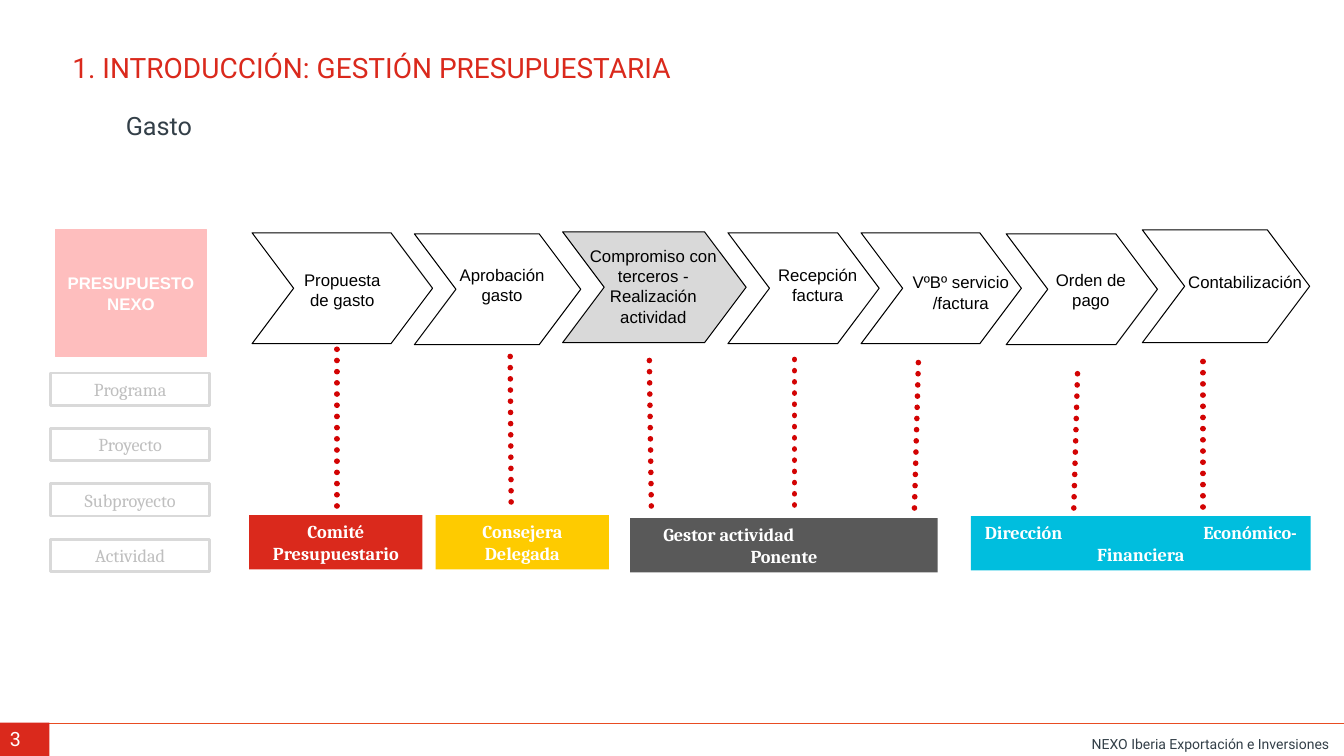
"""Build the slide on the spending workflow of the budget."""
from dataclasses import dataclass

from lxml.etree import SubElement
from pptx import Presentation
from pptx.dml.color import RGBColor
from pptx.enum.dml import MSO_LINE
from pptx.enum.shapes import MSO_CONNECTOR, MSO_SHAPE
from pptx.enum.text import MSO_ANCHOR, PP_ALIGN
from pptx.oxml.ns import qn
from pptx.util import Inches, Pt


@dataclass(frozen=True)
class Theme:
    """Colours, fonts and type sizes of the slide."""
    red: str = "DA291C"
    dots: str = "D30303"
    rule: str = "E84C22"
    pink: str = "FEBEBE"
    yellow: str = "FECB00"
    cyan: str = "00BEDE"
    charcoal: str = "595959"
    silver: str = "D9D9D9"
    faded: str = "BFBFBF"
    slate: str = "333F48"
    black: str = "000000"
    white: str = "FFFFFF"
    brand: str = "Roboto"
    plain: str = "Arial"
    serif: str = "Cambria"
    title: int = 20
    subtitle: int = 18
    number: int = 14
    owner: int = 13
    step: int = 12
    footer: int = 10


THEME = Theme()
WIDTH, HEIGHT = 13.33, 7.5
FOOTER_TOP = 7.17

TITLE = "1. INTRODUCCIÓN: GESTIÓN PRESUPUESTARIA"
SUBTITLE = "Gasto"
FOOTER = "NEXO Iberia Exportación e Inversiones"
PAGE_NUMBER = "3"
BUDGET = "PRESUPUESTO\nNEXO"
LEVELS = ["Programa", "Proyecto", "Subproyecto", "Actividad"]
LEVEL_TOP, LEVEL_PITCH = 3.7, 0.55

# label, chevron (left, top, width, height), label (left, top, width, height), fill
STEPS = [
    ("Propuesta de gasto", (2.5, 2.31, 1.79, 1.1), (2.87, 2.63, 1.05, 0.5), None),
    ("Aprobación gasto", (4.11, 2.32, 1.65, 1.1), (4.3, 2.58, 1.36, 0.5), None),
    ("Compromiso con terceros - Realización actividad",
     (5.58, 2.3, 1.82, 1.1), (5.69, 2.39, 1.58, 0.91), THEME.silver),
    ("Recepción factura", (7.22, 2.31, 1.5, 1.1), (7.47, 2.58, 1.28, 0.51), None),
    ("VºBº servicio /factura", (8.54, 2.31, 1.59, 1.1), (8.73, 2.65, 1.6, 0.51), None),
    ("Orden de pago", (9.98, 2.32, 1.5, 1.1), (10.22, 2.63, 1.2, 0.5), None),
    ("Contabilización", (11.33, 2.28, 1.66, 1.12), (11.59, 2.65, 1.52, 0.31), None),
]
LINKS = [
    ((3.34, 5.02), (3.34, 3.46)),
    ((5.07, 4.98), (5.06, 3.48)),
    ((6.46, 5.02), (6.44, 3.53)),
    ((7.88, 5.01), (7.88, 3.52)),
    ((9.07, 5.04), (9.11, 3.54)),
    ((10.65, 5.04), (10.69, 3.6)),
    ((11.93, 5.03), (11.93, 3.51)),
]
# label, (left, top, width), fill, indent of a left-aligned first line
OWNERS = [
    ("Comité Presupuestario", (2.47, 5.11, 1.72), THEME.red, None),
    ("Consejera Delegada", (4.32, 5.11, 1.72), THEME.yellow, None),
    ("Gestor actividad\nPonente", (6.25, 5.14, 3.05), THEME.charcoal, 0.23),
    ("Dirección\tEconómico-\nFinanciera", (9.63, 5.12, 3.37), THEME.cyan, 0.04),
]
OWNER_HEIGHT, OWNER_TAB = 0.54, 3.12


def write(shape, text, size, font, color, bold=False, align=PP_ALIGN.CENTER):
    """Put formatted text into a shape."""
    frame = shape.text_frame
    frame.word_wrap = True
    frame.text = text
    for para in frame.paragraphs:
        para.alignment = align
        for span in para.runs:
            span.font.size, span.font.name, span.font.bold = Pt(size), font, bold
            span.font.color.rgb = RGBColor.from_string(color)
    return frame


def add_label(page, place, *style, **options):
    """Add a text box."""
    box = page.shapes.add_textbox(*map(Inches, place))
    return write(box, *style, **options)


def add_block(page, kind, place, fill=None, line=None, weight=0.75):
    """Add a flat preset shape."""
    block = page.shapes.add_shape(kind, *map(Inches, place))
    block.shadow.inherit = False
    block.text_frame.vertical_anchor = MSO_ANCHOR.TOP
    if fill:
        block.fill.solid()
        block.fill.fore_color.rgb = RGBColor.from_string(fill)
    else:
        block.fill.background()
    if line:
        block.line.color.rgb = RGBColor.from_string(line)
        block.line.width = Pt(weight)
    else:
        block.line.fill.background()
    return block


def add_line(page, start, end, color, weight):
    """Add a straight line without shadow."""
    line = page.shapes.add_connector(MSO_CONNECTOR.STRAIGHT, *map(Inches, start + end))
    line.line.color.rgb = RGBColor.from_string(color)
    line.line.width = Pt(weight)
    SubElement(line.element.spPr, qn("a:effectLst"))
    return line


def add_footer(page):
    """Add the rule, the footer text and the number block."""
    add_line(page, (0.02, 7.18), (WIDTH, 7.18), THEME.rule, 0.5)
    frame = add_label(page, (9.9, 7.16, 3.38, 0.4), FOOTER, THEME.footer,
                      THEME.brand, THEME.slate, align=PP_ALIGN.RIGHT)
    frame.paragraphs[0].line_spacing = 1.5
    add_block(page, MSO_SHAPE.RECTANGLE, (0, FOOTER_TOP, 0.49, HEIGHT - FOOTER_TOP), THEME.red)
    add_label(page, (0, 7.16, 0.44, 0.34), PAGE_NUMBER, THEME.number,
              THEME.brand, THEME.white, align=PP_ALIGN.LEFT)


def add_budget(page):
    """Add the budget block and its levels."""
    budget = add_block(page, MSO_SHAPE.RECTANGLE, (0.55, 2.28, 1.5, 1.26), THEME.pink, THEME.pink)
    write(budget, BUDGET, THEME.step, THEME.plain, THEME.white, bold=True)
    budget.text_frame.vertical_anchor = MSO_ANCHOR.MIDDLE
    for row, level in enumerate(LEVELS):
        place = (0.5, LEVEL_TOP + row * LEVEL_PITCH, 1.58, 0.32)
        block = add_block(page, MSO_SHAPE.RECTANGLE, place, line=THEME.silver, weight=2)
        write(block, level, THEME.owner, THEME.serif, THEME.faded)


def add_owner(page, label, place, fill, indent):
    """Add the block of the body in charge of some steps."""
    block = add_block(page, MSO_SHAPE.RECTANGLE, place + (OWNER_HEIGHT,), fill)
    frame = write(block, label, THEME.owner, THEME.serif, THEME.white, bold=True)
    if indent is not None:
        first = frame.paragraphs[0]
        first.alignment = PP_ALIGN.LEFT
        properties = first._p.get_or_add_pPr()
        properties.set("marL", str(Inches(indent)))
        if "\t" in label:
            tabs = SubElement(properties, qn("a:tabLst"))
            SubElement(tabs, qn("a:tab"), pos=str(Inches(OWNER_TAB)), algn="r")


def main():
    """Build and save the deck."""
    deck = Presentation()
    deck.slide_width, deck.slide_height = Inches(WIDTH), Inches(HEIGHT)
    page = deck.slides.add_slide(deck.slide_layouts[6])
    add_footer(page)
    add_label(page, (0.62, 0.45, 12.14, 0.57), TITLE, THEME.title,
              THEME.brand, THEME.red, align=PP_ALIGN.LEFT)
    add_label(page, (1.15, 1.04, 7.53, 0.48), SUBTITLE, THEME.subtitle,
              THEME.brand, THEME.slate, align=PP_ALIGN.LEFT)
    add_budget(page)
    for label, place, label_place, fill in STEPS:
        chevron = add_block(page, MSO_SHAPE.CHEVRON, place, fill, THEME.black)
        chevron.adjustments[0] = 0.375
        add_label(page, label_place, label, THEME.step, THEME.plain, THEME.black)
    for owner in OWNERS:
        add_owner(page, *owner)
    for start, end in LINKS:
        link = add_line(page, start, end, THEME.dots, 4)
        link.line.dash_style = MSO_LINE.ROUND_DOT
        link.element.spPr.find(qn("a:ln")).set("cap", "rnd")
    deck.save("out.pptx")


if __name__ == "__main__":
    main()
